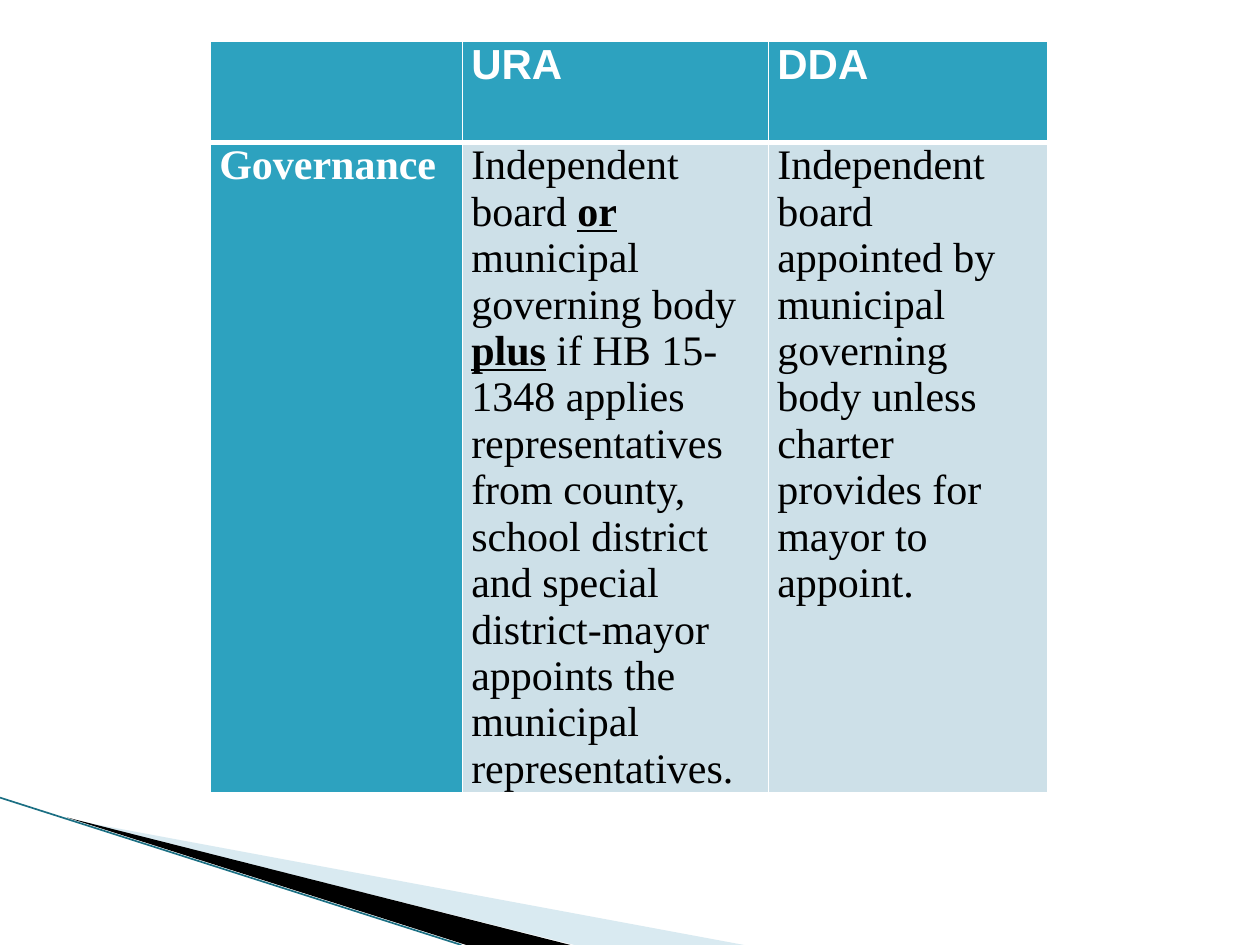
from lxml import etree
from pptx import Presentation
from pptx.dml.color import RGBColor
from pptx.oxml.ns import qn
from pptx.enum.shapes import MSO_CONNECTOR
from pptx.util import Cm, Pt

STRAIGHT = MSO_CONNECTOR.STRAIGHT

COLORS = {
    "header": "2DA2BF",
    "body": "CDE0E8",
    "white": "FFFFFF",
    "black": "000000",
    "swoosh": "A0CBDC",
    "edge": "1B6F83",
}

# Content: each cell is a list of (text, emphasized) runs
ROWS = [
    [[], [("URA", False)], [("DDA", False)]],
    [
        [("Governance", False)],
        [
            ("Independent board ", False),
            ("or", True),
            (" municipal governing body ", False),
            ("plus", True),
            (" if HB 15-1348 applies representatives from county, school district "
             "and special district-mayor appoints the municipal representatives.", False),
        ],
        [("Independent board appointed by municipal governing body unless "
          "charter provides for mayor to appoint.", False)],
    ],
]
COLUMN_WIDTHS = [5.08, 6.17, 5.64]
ROW_HEIGHTS = [2.03, 12.93]
TABLE_LEFT, TABLE_TOP = 4.24, 0.84

# Corner decoration: points in cm, color, opacity in percent
WEDGES = [
    ([(1.4, 16.52), (15.0, 19.05), (11.58, 19.05)], "swoosh", 40),
    ([(1.35, 16.48), (11.5, 19.05), (9.4, 19.05)], "black", 100),
]
EDGE = [(0, 16.08), (9.3, 19.05)]


def color(name):
    return RGBColor.from_string(COLORS[name])


def add_wedge(slide, points, color_name, opacity):
    corners = [(Cm(x), Cm(y)) for x, y in points]
    builder = slide.shapes.build_freeform(*corners[0])
    builder.add_line_segments(corners[1:], close=True)
    shape = builder.convert_to_shape()
    shape.shadow.inherit = False
    shape.line.fill.background()
    shape.fill.solid()
    shape.fill.fore_color.rgb = color(color_name)
    if opacity < 100:
        value = shape.fill._xPr.find(".//" + qn("a:srgbClr"))
        etree.SubElement(value, qn("a:alpha"), val=str(opacity * 1000))


def add_edge(slide):
    start, end = EDGE
    connector = slide.shapes.add_connector(STRAIGHT, *map(Cm, start + end))
    connector.line.color.rgb = color("edge")
    connector.line.width = Pt(0.95)
    etree.SubElement(connector._element.spPr, qn("a:effectLst"))


def set_borders(cell, widths):
    properties = cell._tc.get_or_add_tcPr()
    for side, width in widths.items():
        line = etree.SubElement(properties, qn("a:ln" + side), w=str(Pt(width)))
        fill = etree.SubElement(line, qn("a:solidFill"))
        etree.SubElement(fill, qn("a:srgbClr"), val=COLORS["white"])


def fill_cell(cell, runs, is_header_row, is_header):
    set_borders(cell, {
        "L": 1,
        "R": 1,
        "T": 1 if is_header_row else 3,
        "B": 3 if is_header_row else 1,
    })
    cell.margin_left = cell.margin_right = Cm(0.18)
    cell.margin_top = cell.margin_bottom = 0
    cell.fill.solid()
    cell.fill.fore_color.rgb = color("header" if is_header else "body")
    paragraph = cell.text_frame.paragraphs[0]
    for text, emphasized in runs:
        run = paragraph.add_run()
        run.text = text
        run.font.name = "Arial" if is_header_row else "Times New Roman"
        run.font.size = Pt(24)
        run.font.bold = is_header or emphasized
        run.font.underline = emphasized
        run.font.color.rgb = color("white" if is_header else "black")


def add_comparison_table(slide):
    frame = slide.shapes.add_table(
        len(ROWS), len(COLUMN_WIDTHS), Cm(TABLE_LEFT), Cm(TABLE_TOP),
        Cm(sum(COLUMN_WIDTHS)), Cm(sum(ROW_HEIGHTS)))
    table = frame.table
    for column, width in zip(table.columns, COLUMN_WIDTHS):
        column.width = Cm(width)
    for row, height in zip(table.rows, ROW_HEIGHTS):
        row.height = Cm(height)
    for row_index, row in enumerate(ROWS):
        for column_index, runs in enumerate(row):
            is_header = row_index == 0 or column_index == 0
            fill_cell(table.cell(row_index, column_index), runs,
                      row_index == 0, is_header)


def main():
    presentation = Presentation()
    presentation.slide_width, presentation.slide_height = Cm(25.4), Cm(19.05)
    slide = presentation.slides.add_slide(presentation.slide_layouts[6])

    # Corner decoration behind the table
    for points, color_name, opacity in WEDGES:
        add_wedge(slide, points, color_name, opacity)
    add_edge(slide)

    add_comparison_table(slide)
    presentation.save("out.pptx")


if __name__ == "__main__":
    main()
